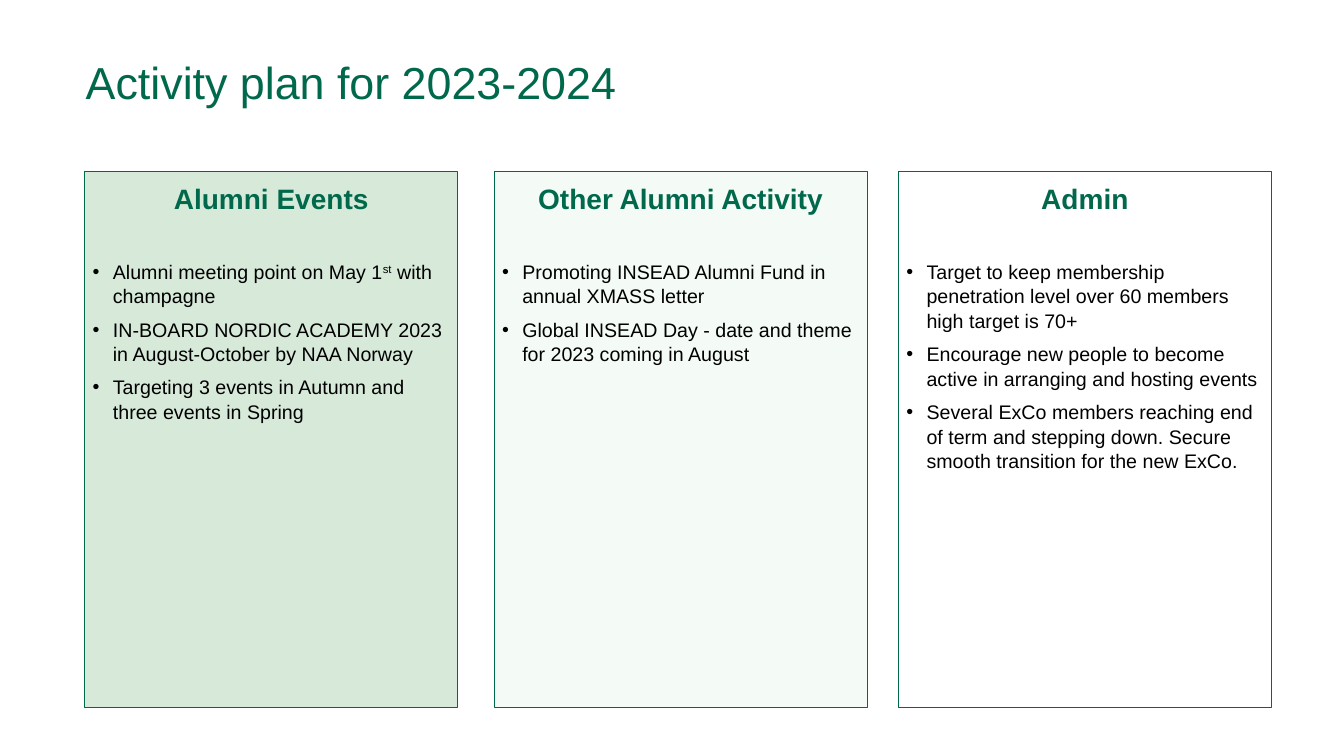
from lxml.etree import SubElement
from pptx import Presentation
from pptx.dml.color import RGBColor
from pptx.enum.shapes import MSO_SHAPE as Shape
from pptx.enum.text import MSO_ANCHOR as Anchor, PP_ALIGN as Align
from pptx.oxml.ns import qn
from pptx.util import Inches, Pt

GREEN = RGBColor(0x00, 0x68, 0x4B)
SAGE = RGBColor(0xD7, 0xEA, 0xD9)
MINT = RGBColor(0xF4, 0xFA, 0xF5)
WHITE = RGBColor(0xFF, 0xFF, 0xFF)
BLACK = RGBColor(0x00, 0x00, 0x00)

PANEL_TOP, PANEL_WIDTH, PANEL_HEIGHT = 22.67, 27.76, 70.93
PANELS = [
    (6.3, SAGE, "Alumni Events", [
        ["Alumni meeting point on May 1", "st", " with champagne"],
        ["IN-BOARD NORDIC ACADEMY 2023 in August-October by NAA Norway"],
        ["Targeting 3 events in Autumn and three events in Spring"],
    ]),
    (36.76, MINT, "Other Alumni Activity", [
        ["Promoting INSEAD Alumni Fund in annual XMASS letter"],
        ["Global INSEAD Day - date and theme for 2023 coming in August"],
    ]),
    (66.84, WHITE, "Admin", [
        ["Target to keep membership penetration level over 60 members high target is 70+"],
        ["Encourage new people to become active in arranging and hosting events"],
        ["Several ExCo members reaching end of term and stepping down. "
         "Secure smooth transition for the new ExCo."],
    ]),
]


class PlanSlide:
    """Draw styled elements on one slide, placed in percent of its size."""

    title_format = {"name": "Arial", "size": Pt(32), "bold": False}
    heading_format = {"name": "Arial", "size": Pt(20), "bold": True}
    bullet_format = {"name": "Arial", "size": Pt(14), "bold": False}

    def __init__(self, presentation):
        self.width = presentation.slide_width
        self.height = presentation.slide_height
        self.slide = presentation.slides.add_slide(presentation.slide_layouts[6])

    def place(self, left, top, width, height):
        return (round(self.width * left / 100), round(self.height * top / 100),
                round(self.width * width / 100), round(self.height * height / 100))

    def set_frame(self, frame, inset, anchor):
        values = {"word_wrap": True, "vertical_anchor": anchor}
        for side in ("left", "top", "right", "bottom"):
            values[f"margin_{side}"] = Inches(inset)
        for name, value in values.items():
            setattr(frame, name, value)

    def add_text(self, paragraph, parts, color, font_format, layout):
        for name, value in layout.items():
            setattr(paragraph, name, value)
        for part in parts:
            run = paragraph.add_run()
            run.text = part
            for name, value in font_format.items():
                setattr(run.font, name, value)
            run.font.color.rgb = color
            if part == "st":
                run._r.get_or_add_rPr().set("baseline", "30000")

    def title(self, text, *area):
        frame = self.slide.shapes.add_textbox(*self.place(*area)).text_frame
        self.set_frame(frame, 0, Anchor.MIDDLE)
        self.add_text(frame.paragraphs[0], [text], GREEN, self.title_format,
                      {"alignment": Align.LEFT, "line_spacing": 0.9})

    def bullet(self, frame, parts, space_before):
        paragraph = frame.add_paragraph()
        properties = paragraph._p.get_or_add_pPr()
        properties.set("marL", str(Inches(0.2)))
        properties.set("indent", str(-Inches(0.2)))
        SubElement(properties, qn("a:buFont")).set("typeface", "Arial")
        SubElement(properties, qn("a:buChar")).set("char", "•")
        self.add_text(paragraph, parts, BLACK, self.bullet_format,
                      {"alignment": Align.LEFT, "line_spacing": 1.05,
                       "space_before": Pt(space_before)})

    def panel(self, left, fill, heading, bullets):
        area = self.place(left, PANEL_TOP, PANEL_WIDTH, PANEL_HEIGHT)
        shape = self.slide.shapes.add_shape(Shape.RECTANGLE, *area)
        shape.shadow.inherit = False
        shape.fill.solid()
        shape.fill.fore_color.rgb = fill
        shape.line.color.rgb = GREEN
        shape.line.width = Pt(0.75)
        frame = shape.text_frame
        self.set_frame(frame, 0.08, Anchor.TOP)
        self.add_text(frame.paragraphs[0], [heading], GREEN, self.heading_format,
                      {"alignment": Align.CENTER, "line_spacing": 1.05})
        for index, parts in enumerate(bullets):
            self.bullet(frame, parts, 6 if index else 31.3)


def main():
    presentation = Presentation()
    presentation.slide_width = Inches(13.33)
    presentation.slide_height = Inches(7.5)
    plan = PlanSlide(presentation)
    plan.title("Activity plan for 2023-2024", 6.38, 4.4, 69.54, 13.73)
    for panel in PANELS:
        plan.panel(*panel)
    presentation.save("out.pptx")


if __name__ == "__main__":
    main()
